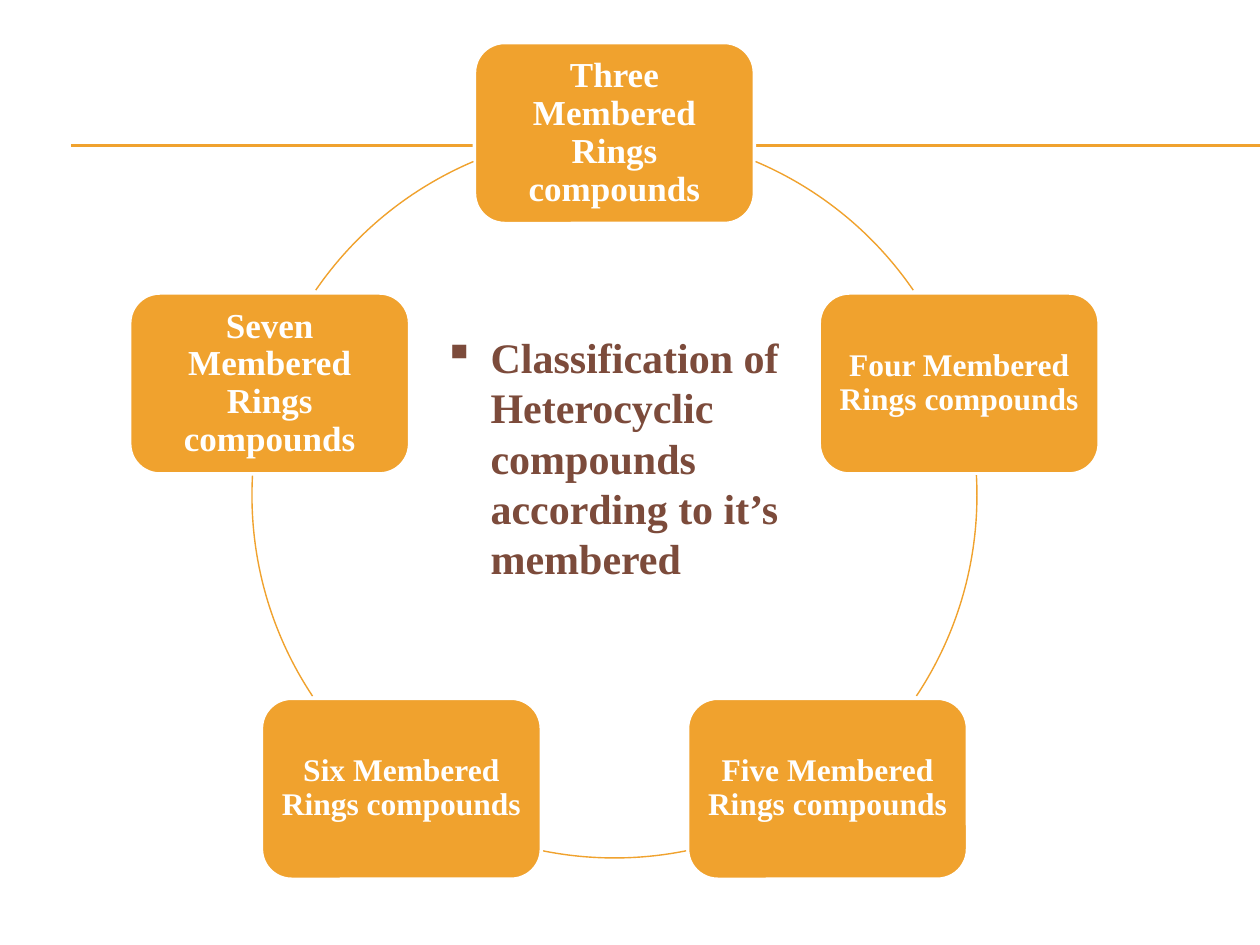
from dataclasses import dataclass
from math import cos, radians, sin

from lxml.etree import SubElement
from pptx import Presentation
from pptx.dml.color import RGBColor
from pptx.enum.shapes import MSO_CONNECTOR, MSO_SHAPE
from pptx.enum.text import MSO_ANCHOR, MSO_AUTO_SIZE, PP_ALIGN
from pptx.oxml.ns import qn
from pptx.util import Pt


@dataclass(frozen=True)
class Theme:
    accent: RGBColor = RGBColor(0xF0, 0xA2, 0x2E)
    brown: RGBColor = RGBColor(0x7C, 0x4B, 0x3B)
    white: RGBColor = RGBColor(0xFF, 0xFF, 0xFF)
    font: str = "Times New Roman"
    title_size: int = 24
    rule_width: float = 0.75
    arc_width: float = 0.79
    border_width: int = 2


T = Theme()
NODE_W, NODE_H = 280, 181
NODES = [
    ("Three Membered Rings compounds", 20),
    ("Four Membered Rings compounds", 18),
    ("Five Membered Rings compounds", 18),
    ("Six Membered Rings compounds", 18),
    ("Seven Membered Rings compounds", 20),
]
ARCS = [(292.9, 325.5), (356.8, 33.6), (78.6, 101.4), (146.4, 183.2), (214.5, 247.1)]


def px(n):
    return round(n * 914400 / 126)


def add_run(p, text, size, color):
    r = p.add_run()
    r.text = text
    r.font.name = T.font
    r.font.size = Pt(size)
    r.font.bold = True
    r.font.color.rgb = color


def add_rules(s, x, y, w):
    for line_y in (y, y + 1):
        c = s.shapes.add_connector(
            MSO_CONNECTOR.STRAIGHT, px(x), px(line_y), px(x + w), px(line_y))
        c.line.color.rgb = T.accent
        c.line.width = Pt(T.rule_width)
        SubElement(c._element.spPr, qn("a:effectLst"))


def add_title(s, x, y, w, h, text):
    sp = s.shapes.title
    sp.left, sp.top, sp.width, sp.height = px(x), px(y), px(w), px(h)
    tf = sp.text_frame
    tf.word_wrap = True
    tf.auto_size = MSO_AUTO_SIZE.SHAPE_TO_FIT_TEXT
    tf.vertical_anchor = MSO_ANCHOR.TOP
    p = tf.paragraphs[0]
    p.alignment = PP_ALIGN.LEFT
    pPr = p._p.get_or_add_pPr()
    pPr.set("marL", str(px(47)))
    pPr.set("indent", str(-px(47)))
    SubElement(pPr, qn("a:buChar"), char="▪")
    add_run(p, text, T.title_size, T.brown)


def add_node(s, cx, cy, text, size):
    sp = s.shapes.add_shape(
        MSO_SHAPE.ROUNDED_RECTANGLE,
        px(cx - NODE_W / 2), px(cy - NODE_H / 2), px(NODE_W), px(NODE_H))
    sp.shadow.inherit = False
    sp.fill.solid()
    sp.fill.fore_color.rgb = T.accent
    sp.line.color.rgb = T.white
    sp.line.width = Pt(T.border_width)
    tf = sp.text_frame
    tf.word_wrap = True
    tf.vertical_anchor = MSO_ANCHOR.MIDDLE
    inset = px(size // 2)
    tf.margin_left = tf.margin_right = tf.margin_top = tf.margin_bottom = inset
    p = tf.paragraphs[0]
    p.alignment = PP_ALIGN.CENTER
    p.line_spacing = 0.9
    add_run(p, text, size, T.white)


def add_arc(s, x, y, d, start, end):
    sp = s.shapes.add_shape(MSO_SHAPE.ARC, px(x), px(y), px(d), px(d))
    sp.adjustments[0] = start * 0.6
    sp.adjustments[1] = end * 0.6
    sp.shadow.inherit = False
    sp.fill.background()
    sp.line.color.rgb = T.accent
    sp.line.width = Pt(T.arc_width)


def add_cycle(s, x, y, d):
    radius = d / 2
    step = 360 / len(NODES)
    for i, ((text, size), (start, end)) in enumerate(zip(NODES, ARCS)):
        a = radians(i * step - 90)
        add_node(s, x + radius * (1 + cos(a)), y + radius * (1 + sin(a)), text, size)
        add_arc(s, x, y, d, start, end)


def main():
    prs = Presentation()
    prs.slide_width, prs.slide_height = px(1260), px(945)
    s = prs.slides.add_slide(prs.slide_layouts[5])
    add_rules(s, 71, 145, 1189)
    add_cycle(s, 252, 133, 725)
    add_title(s, 431, 325, 378, 267,
              "Classification of Heterocyclic compounds according to it’s membered")
    prs.save("out.pptx")


if __name__ == "__main__":
    main()
